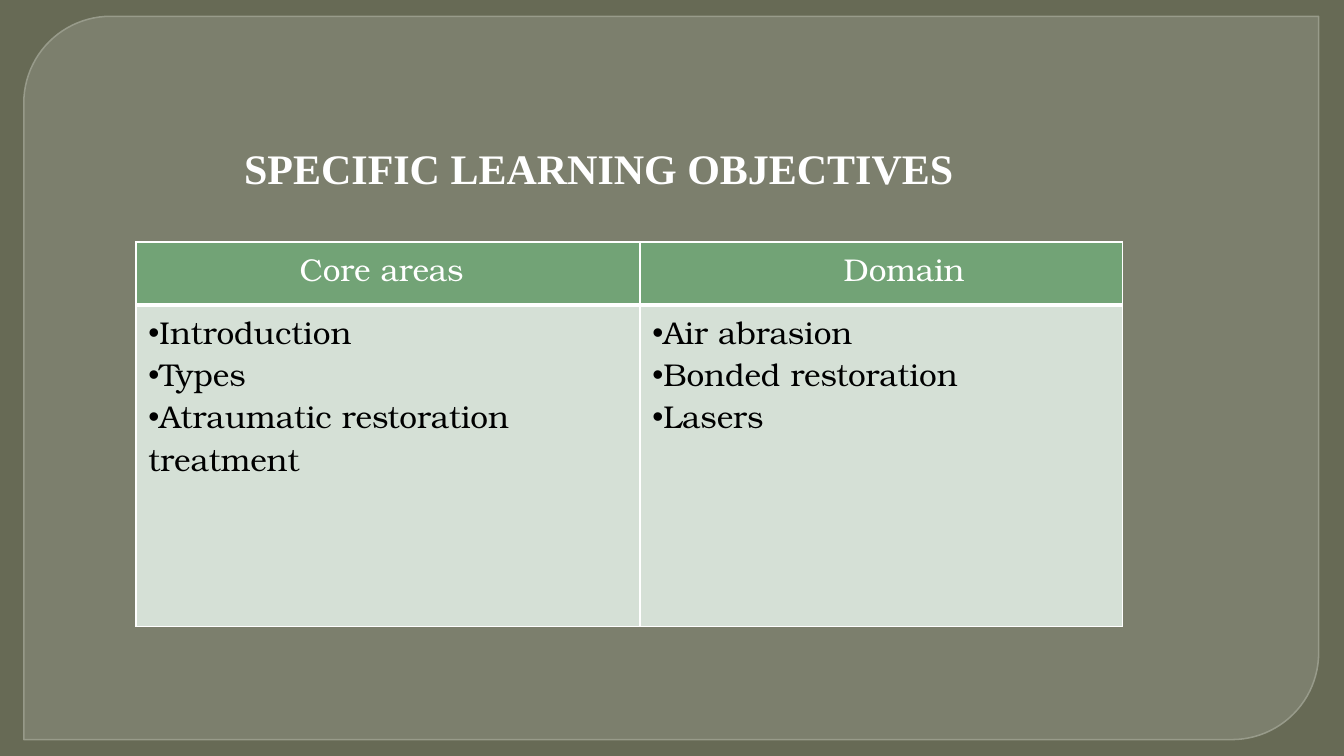
from dataclasses import dataclass

from lxml import etree
from pptx import Presentation
from pptx import util as u
from pptx.dml.color import RGBColor
from pptx.enum import shapes, text
from pptx.oxml import ns


@dataclass(frozen=True)
class Theme:
    """Colours, fonts and type sizes of the slide."""
    backdrop: str = "676A55"
    panel: str = "888B7B"
    panel_edge: str = "9DA090"
    header: str = "72A376"
    body: str = "D5E0D6"
    light: str = "FFFFFF"
    dark: str = "000000"
    heading_font: str = "Times New Roman"
    table_font: str = "TeX Gyre Bonum"
    heading_size: int = 24
    table_size: int = 18


THEME = Theme()
COLUMNS = [
    ("Core areas", 10.16, 3.3,
     ["Introduction", "Types", "Atraumatic restoration treatment"]),
    ("Domain", 9.73, 4.11,
     ["Air abrasion", "Bonded restoration", "Lasers"]),
]
ROW_HEIGHTS = (1.27, 6.48)


def apply_format(target, values):
    """Set each named attribute of the target."""
    for name, value in values.items():
        setattr(target, name, value)


def paint(fill, colour):
    """Make a fill solid in the given colour."""
    fill.solid()
    fill.fore_color.rgb = RGBColor.from_string(colour)


def set_opacity(fill_parent, percent):
    """Give the solid fill directly inside an element an opacity."""
    colour = fill_parent.find(ns.qn("a:solidFill"))[0]
    etree.SubElement(colour, ns.qn("a:alpha"), val=str(percent * 1000))


def style_run(run, colour, font, size, bold=False):
    """Format one run of text."""
    apply_format(run.font, {"name": font, "size": u.Pt(size), "bold": bold})
    run.font.color.rgb = RGBColor.from_string(colour)


def add_panel(slide):
    """Place the translucent panel behind everything else."""
    panel = slide.shapes.add_shape(
        shapes.MSO_SHAPE.ROUND_2_DIAG_RECTANGLE,
        u.Cm(0.48), u.Cm(0.33), u.Cm(26.11), u.Cm(14.58))
    panel.adjustments[0] = 0.12
    panel.adjustments[1] = 0
    panel.shadow.inherit = False
    paint(panel.fill, THEME.panel)
    paint(panel.line.fill, THEME.panel_edge)
    panel.line.width = u.Pt(0.87)
    properties = panel.element.spPr
    set_opacity(properties, 65)
    set_opacity(properties.find(ns.qn("a:ln")), 88)
    panel.element.getparent().insert(2, panel.element)


def add_heading(slide, wording):
    """Move, fill and format the title placeholder."""
    heading = slide.shapes.title
    apply_format(heading, {"left": u.Cm(2.97), "top": u.Cm(2.74),
                           "width": u.Cm(18.42), "height": u.Cm(1.27)})
    frame = heading.text_frame
    apply_format(frame, {"word_wrap": True,
                         "auto_size": text.MSO_AUTO_SIZE.SHAPE_TO_FIT_TEXT,
                         "vertical_anchor": text.MSO_ANCHOR.TOP})
    line = frame.paragraphs[0]
    line.alignment = text.PP_ALIGN.CENTER
    run = line.add_run()
    run.text = wording
    style_run(run, THEME.light, THEME.heading_font, THEME.heading_size, True)


def add_borders(cell, bottom):
    """Draw the light borders of a table cell."""
    for side in "LRTB":
        width = u.Pt(bottom if side == "B" else 1)
        edge = etree.SubElement(cell._tc.get_or_add_tcPr(),
                                ns.qn(f"a:ln{side}"), w=str(width))
        solid = etree.SubElement(edge, ns.qn("a:solidFill"))
        etree.SubElement(solid, ns.qn("a:srgbClr"), val=THEME.light)


def add_bullet(paragraph):
    """Start a paragraph with a bullet that has no hanging indent."""
    properties = paragraph._p.get_or_add_pPr()
    etree.SubElement(properties, ns.qn("a:buFont"), typeface="Arial")
    etree.SubElement(properties, ns.qn("a:buChar"), char="•")


def fill_cell(cell, lines, colour, background, bottom=1, bulleted=False):
    """Write the lines of a cell and style its surface."""
    add_borders(cell, bottom)
    paint(cell.fill, background)
    frame = cell.text_frame
    for number, wording in enumerate(lines):
        paragraph = frame.add_paragraph() if number else frame.paragraphs[0]
        if bulleted:
            add_bullet(paragraph)
        run = paragraph.add_run()
        run.text = wording
        style_run(run, colour, THEME.table_font, THEME.table_size)


def add_objectives(slide):
    """Build the table of core areas and domains."""
    width = sum(column[1] for column in COLUMNS)
    table = slide.shapes.add_table(
        len(ROW_HEIGHTS), len(COLUMNS), u.Cm(2.74), u.Cm(4.88),
        u.Cm(width), u.Cm(sum(ROW_HEIGHTS))).table
    apply_format(table, {"first_row": False, "horz_banding": False})
    for row, height in zip(table.rows, ROW_HEIGHTS):
        row.height = u.Cm(height)
    for index, (label, breadth, inset, topics) in enumerate(COLUMNS):
        table.columns[index].width = u.Cm(breadth)
        header = table.cell(0, index)
        header.margin_left = u.Cm(inset)
        fill_cell(header, [label], THEME.light, THEME.header, bottom=3)
        fill_cell(table.cell(1, index), topics, THEME.dark, THEME.body,
                  bulleted=True)


def main():
    """Build and save the slide."""
    deck = Presentation()
    apply_format(deck, {"slide_width": u.Cm(27.1),
                        "slide_height": u.Cm(15.24)})
    slide = deck.slides.add_slide(deck.slide_layouts.get_by_name("Title Only"))
    paint(slide.background.fill, THEME.backdrop)
    add_panel(slide)
    add_objectives(slide)
    add_heading(slide, "SPECIFIC LEARNING OBJECTIVES ")
    deck.save("out.pptx")


if __name__ == "__main__":
    main()
